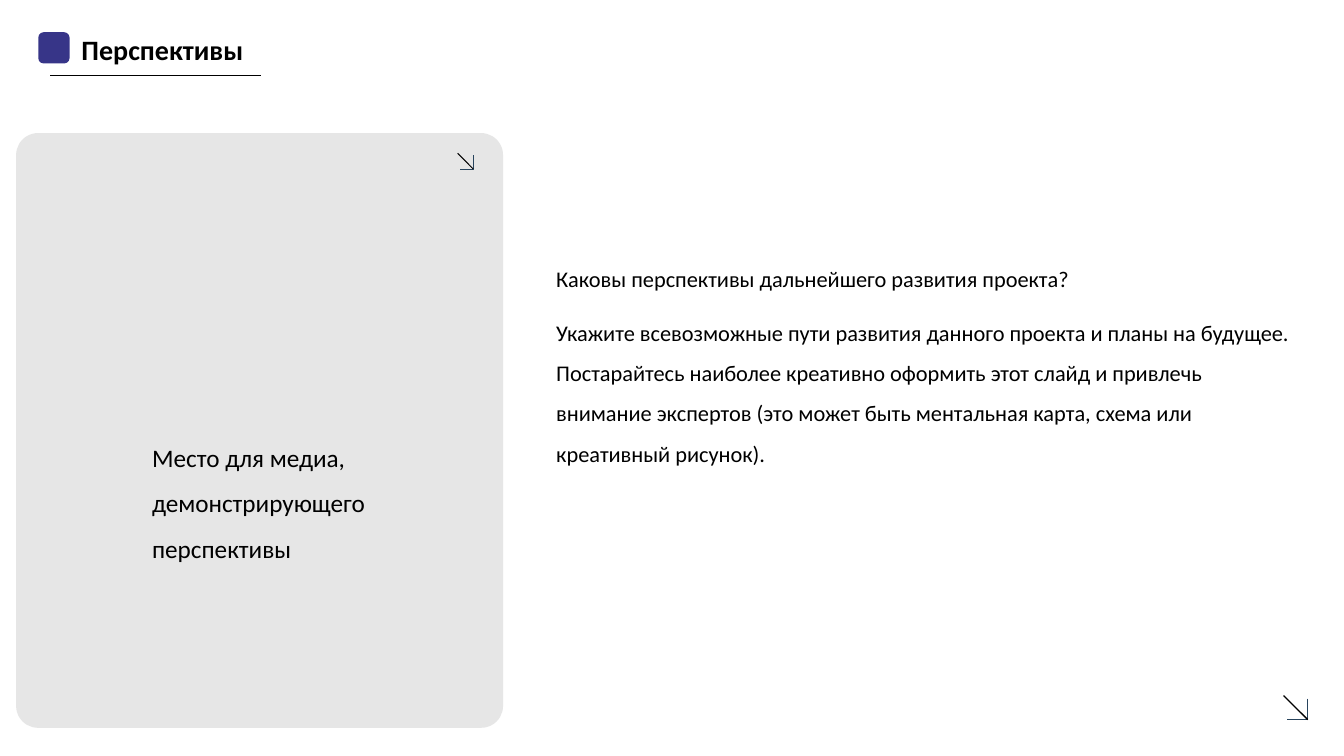
import collections

import pptx
import pptx.dml.color
import pptx.enum.shapes
import pptx.enum.text
import pptx.oxml
import pptx.oxml.ns
import pptx.util

COLORS = {"card": "E6E6E6", "accent": "373588", "text": "000000", "bracket": "28445D"}
FONT = "Calibri"
SHAPE = pptx.enum.shapes.MSO_SHAPE
ANCHOR = pptx.enum.text.MSO_ANCHOR

Box = collections.namedtuple("Box", "left top width height")


def inset(box, left, top, width, height):
    """Return an inner box, given in percent of the outer one."""
    return Box(
        round(box.left + box.width * left / 100),
        round(box.top + box.height * top / 100),
        round(box.width * width / 100),
        round(box.height * height / 100),
    )


def color(name):
    return pptx.dml.color.RGBColor.from_string(COLORS[name])


def add_panel(slide, box, fill, rounding):
    panel = slide.shapes.add_shape(SHAPE.ROUNDED_RECTANGLE, *box)
    panel.adjustments[0] = rounding
    panel.shadow.inherit = False
    panel.fill.solid()
    panel.fill.fore_color.rgb = color(fill)
    panel.line.fill.background()


def add_text(slide, box, texts, size, bold=False, spacing=1.0, before=0, anchor=ANCHOR.TOP):
    frame = slide.shapes.add_textbox(*box).text_frame
    frame.word_wrap = True
    frame.vertical_anchor = anchor
    frame.text = "\n".join(texts)
    for paragraph in frame.paragraphs:
        paragraph.line_spacing = spacing
        paragraph.space_before = pptx.util.Pt(before)
        paragraph.font.name = FONT
        paragraph.font.size = pptx.util.Pt(size)
        paragraph.font.bold = bold
        paragraph.font.color.rgb = color("text")


def add_line(slide, box, weight):
    """Draw a line from the top left to the bottom right of the box."""
    line = slide.shapes.add_connector(
        pptx.enum.shapes.MSO_CONNECTOR.STRAIGHT,
        box.left, box.top, box.left + box.width, box.top + box.height,
    )
    line.line.color.rgb = color("text")
    line.line.width = pptx.util.Pt(weight)
    properties = line._element.find(pptx.oxml.ns.qn("p:spPr"))
    properties.append(pptx.oxml.parse_xml(
        "<a:effectLst %s/>" % pptx.oxml.ns.nsdecls("a")))


def add_corner_arrow(slide, box, weight):
    # Bracket at the lower right corner
    inner = inset(box, 12.5, 12.5, 87.5, 87.5)
    right, bottom = inner.left + inner.width, inner.top + inner.height
    builder = slide.shapes.build_freeform(right, inner.top)
    builder.add_line_segments([(right, bottom), (inner.left, bottom)], close=False)
    bracket = builder.convert_to_shape()
    bracket.shadow.inherit = False
    bracket.fill.background()
    bracket.line.color.rgb = color("bracket")
    bracket.line.width = pptx.util.Pt(weight)
    # Diagonal shaft
    add_line(slide, box, weight)


def add_header(slide, box):
    add_panel(slide, inset(box, 0, 0, 9.3, 72), "accent", 0.17)
    add_text(slide, inset(box, 9.9, 0, 90, 77), ["Перспективы"], 20,
             bold=True, anchor=ANCHOR.MIDDLE)
    add_line(slide, inset(box, 3.6, 100, 62.7, 0), 0.5)


def add_media_card(slide, box):
    add_panel(slide, box, "card", 0.045)
    add_corner_arrow(slide, inset(box, 90.68, 3.4, 3.2, 2.65), 0.75)
    add_text(slide, inset(box, 25.9, 48.64, 61.3, 24.75),
             ["Место для медиа, демонстрирующего перспективы"], 18, spacing=1.5)


def add_body(slide, box):
    add_text(slide, box, [
        "Каковы перспективы дальнейшего развития проекта?",
        "Укажите всевозможные пути развития данного проекта и планы на будущее. "
        "Постарайтесь наиболее креативно оформить этот слайд и привлечь внимание "
        "экспертов (это может быть ментальная карта, схема или креативный рисунок).",
    ], 16, spacing=1.5, before=10, anchor=ANCHOR.BOTTOM)


def main():
    deck = pptx.Presentation()
    deck.slide_width = pptx.util.Inches(13.33)
    deck.slide_height = pptx.util.Inches(7.5)
    slide = deck.slides.add_slide(deck.slide_layouts[6])
    page = Box(0, 0, deck.slide_width, deck.slide_height)

    add_media_card(slide, inset(page, 1.2, 17.6, 36.23, 78.67))
    add_body(slide, inset(page, 40.65, 35.07, 56.63, 27.33))
    add_header(slide, inset(page, 2.85, 4.27, 25, 5.73))
    add_corner_arrow(slide, inset(page, 95.5, 92, 1.8, 3.2), 1)
    deck.save("out.pptx")


if __name__ == "__main__":
    main()
